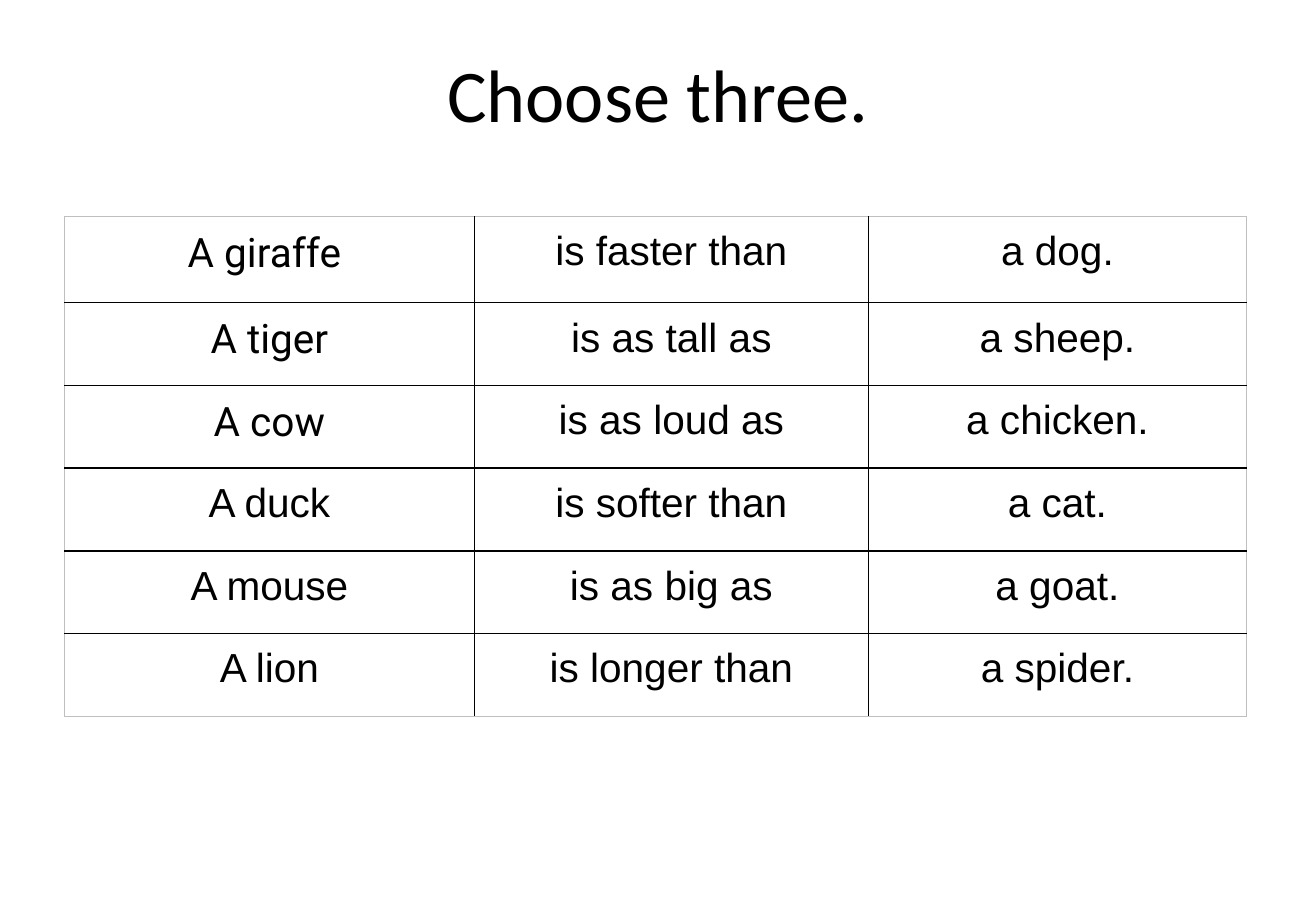
from dataclasses import dataclass

import pptx
import pptx.dml.color
import pptx.enum.text
import pptx.oxml
import pptx.oxml.ns
import pptx.slide
import pptx.table
import pptx.text.text
import pptx.util

Pt = pptx.util.Pt
COLORS = {"ink": "000000", "paper": "FFFFFF", "edge": "BFBFBF"}
WIDTHS = [242.64, 233.28, 223.92]
FIRST, OTHER = 51.12, 48.96


@dataclass
class Row:
    animal: str
    phrase: str
    other: str
    font: str = "Arial"


@dataclass
class Border:
    side: str
    outer: bool


ROWS = [
    Row("A giraffe ", "is faster than", "a dog.", "Roboto"),
    Row("A tiger", "is as tall as", "a sheep.", "Roboto"),
    Row("A cow", "is as loud as", "a chicken.", "Roboto"),
    Row("A duck", "is softer than", "a cat."),
    Row("A mouse", "is as big as", "a goat."),
    Row("A lion", "is longer than", "a spider."),
]


def tint(name: str) -> pptx.dml.color.RGBColor:
    return pptx.dml.color.RGBColor.from_string(COLORS[name])


def write(frame: pptx.text.text.TextFrame, text: str, *, font: str, size: float,
          line: float = 1.0, after: float = 0) -> None:
    frame.word_wrap = True
    para = frame.paragraphs[0]
    para.alignment = pptx.enum.text.PP_ALIGN.CENTER
    para.line_spacing = line
    para.space_after = Pt(after)
    run = para.add_run()
    run.text = text
    run.font.name = font
    run.font.size = Pt(size)
    run.font.color.rgb = tint("ink")


def rule(cell: pptx.table._Cell, border: Border) -> None:
    """Draw one border of a cell, ahead of its fill."""
    color, width = ("edge", 0.5) if border.outer else ("ink", 1)
    line = pptx.oxml.parse_xml(
        f'<a:{border.side} {pptx.oxml.ns.nsdecls("a")} w="{Pt(width)}">'
        f'<a:solidFill><a:srgbClr val="{COLORS[color]}"/></a:solidFill>'
        f'</a:{border.side}>')
    cell._tc.get_or_add_tcPr().append(line)


def add_title(slide: pptx.slide.Slide) -> None:
    box = slide.shapes.add_textbox(Pt(38.88), Pt(21.6), Pt(701.28), Pt(66.96))
    box.fill.solid()
    box.fill.fore_color.rgb = tint("paper")
    frame = box.text_frame
    frame.vertical_anchor = pptx.enum.text.MSO_ANCHOR.MIDDLE
    frame.margin_left = frame.margin_right = Pt(3.6)
    frame.margin_top = frame.margin_bottom = Pt(3.6)
    write(frame, "Choose three.", font="Calibri", size=44)


def add_grid(slide: pptx.slide.Slide) -> None:
    tall = FIRST + OTHER * (len(ROWS) - 1)
    table = slide.shapes.add_table(len(ROWS), len(WIDTHS), Pt(38.16), Pt(128.16),
                                   Pt(sum(WIDTHS)), Pt(tall)).table
    table.first_row = table.horz_banding = False
    for col, width in zip(table.columns, WIDTHS):
        col.width = Pt(width)
    for r, row in enumerate(ROWS):
        table.rows[r].height = Pt(OTHER if r else FIRST)
        for c, text in enumerate([row.animal, row.phrase, row.other]):
            cell = table.cell(r, c)
            cell.margin_left = cell.margin_right = Pt(7.92)
            cell.margin_top = cell.margin_bottom = Pt(3.6)
            for border in [Border("lnL", c == 0),
                           Border("lnR", c == len(WIDTHS) - 1),
                           Border("lnT", r == 0),
                           Border("lnB", r == len(ROWS) - 1)]:
                rule(cell, border)
            cell.fill.background()
            write(cell.text_frame, text, font="Arial" if c else row.font,
                  size=24, line=1.15, after=10)


def main() -> None:
    deck = pptx.Presentation()
    deck.slide_width, deck.slide_height = Pt(779.04), Pt(540)
    slide = deck.slides.add_slide(deck.slide_layouts[6])
    add_title(slide)
    add_grid(slide)
    deck.save("out.pptx")


if __name__ == "__main__":
    main()
